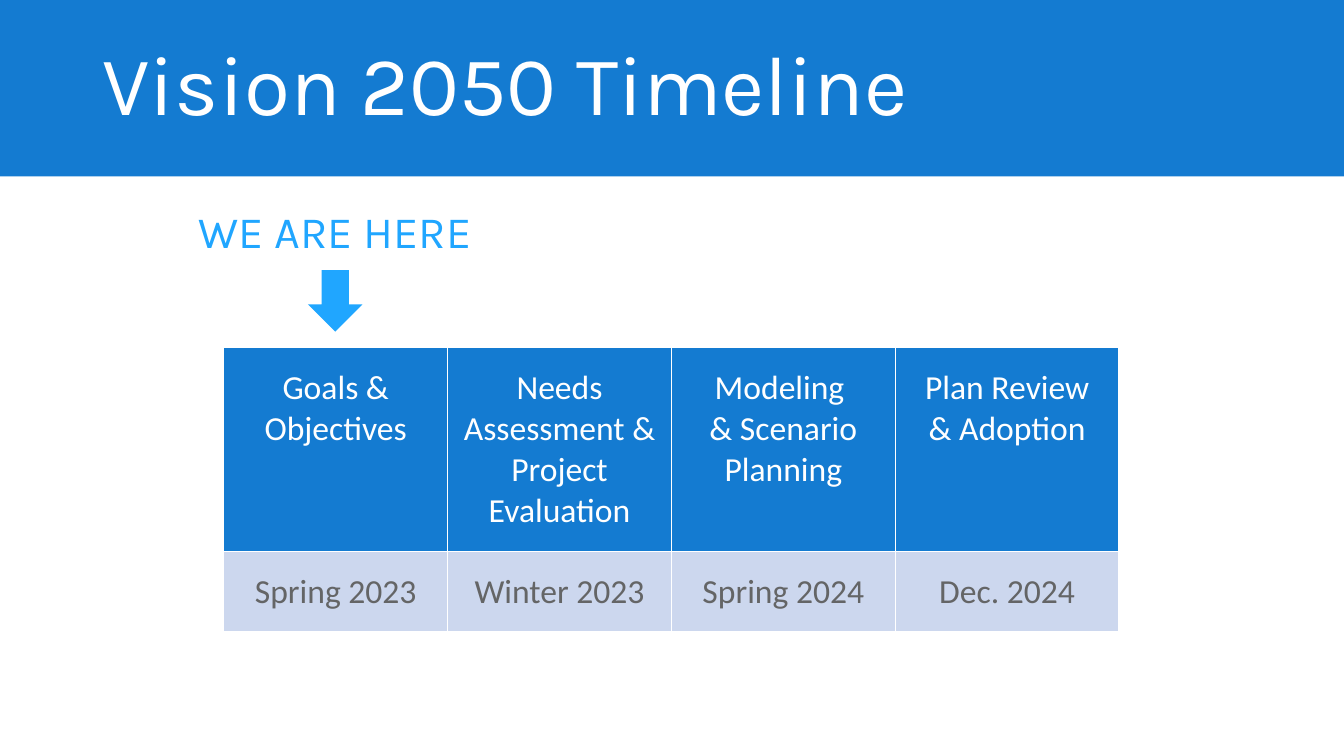
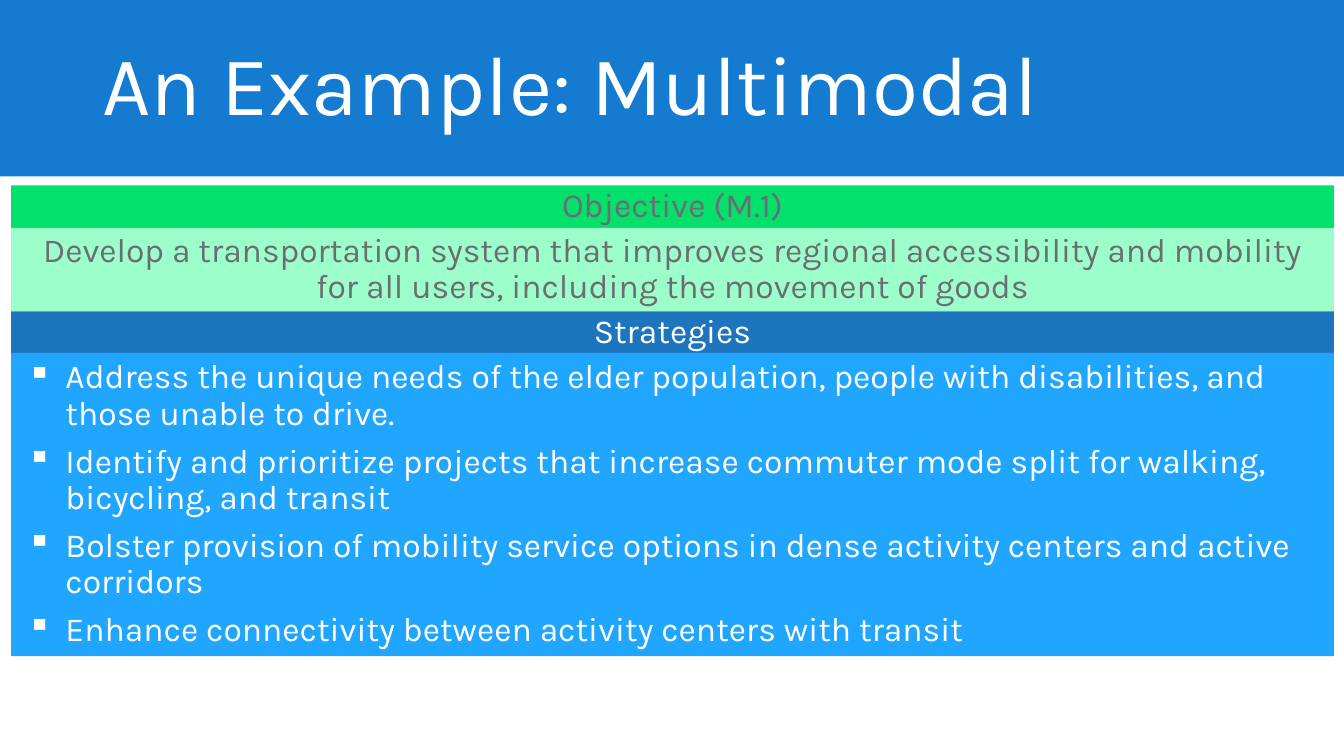
from lxml import etree
from pptx import Presentation
from pptx.dml.color import RGBColor
from pptx.enum.shapes import MSO_SHAPE
from pptx.enum.text import MSO_ANCHOR, PP_ALIGN
from pptx.oxml.ns import qn
from pptx.util import Inches, Pt

RECTANGLE, DOWN_ARROW = MSO_SHAPE.RECTANGLE, MSO_SHAPE.DOWN_ARROW
TOP, MIDDLE, BOTTOM = MSO_ANCHOR.TOP, MSO_ANCHOR.MIDDLE, MSO_ANCHOR.BOTTOM
LEFT, CENTER = PP_ALIGN.LEFT, PP_ALIGN.CENTER

SLIDE_WIDTH, SLIDE_HEIGHT = 13.33, 7.5
BAND_HEIGHT = 1.75
TITLE_FONT, TABLE_FONT = "Karla", "Calibri"
WHITE, BLUE, SKY, NAVY = "FFFFFF", "147BD1", "20A6FF", "1D75BD"
GREEN, MINT, LAVENDER = "03E06C", "9CFECB", "CCD7EE"
GRAY, TABLE_GRAY = "6C6D70", "646566"

PHASES = [
    (["Goals & Objectives"], "Spring 2023"),
    (["Needs Assessment & Project Evaluation"], "Winter 2023"),
    (["Modeling ", "& Scenario Planning"], "Spring 2024"),
    (["Plan Review", "& Adoption"], "Dec. 2024"),
]
OBJECTIVE = ("Develop a transportation system that improves regional accessibility "
             "and mobility for all users, including the movement of goods")
STRATEGIES = [
    "Address the unique needs of the elder population, people with disabilities, "
    "and those unable to drive.",
    "Identify and prioritize projects that increase commuter mode split for walking, "
    "bicycling, and transit",
    "Bolster provision of mobility service options in dense activity centers and "
    "active corridors",
    "Enhance connectivity between activity centers with transit",
]


def color(value):
    return RGBColor.from_string(value)


def add_bullet(para):
    properties = para._p.get_or_add_pPr()
    properties.set("marL", str(Inches(0.38)))
    properties.set("indent", str(-Inches(0.38)))
    etree.SubElement(properties, qn("a:buChar")).set("char", "▪")


def write(frame, lines, size, ink, font=TITLE_FONT, align=CENTER,
          spacing=None, after=None, bullets=False):
    frame.word_wrap = True
    for index, line in enumerate(lines):
        para = frame.add_paragraph() if index else frame.paragraphs[0]
        if bullets:
            add_bullet(para)
        para.alignment = align
        if spacing:
            para.line_spacing = spacing
        if after:
            para.space_after = Pt(after)
        span = para.add_run()
        span.text = line
        span.font.size = Pt(size)
        span.font.name = font
        span.font.color.rgb = color(ink)


def add_block(page, box, fill, preset=RECTANGLE):
    shape = page.shapes.add_shape(preset, *map(Inches, box))
    shape.shadow.inherit = False
    shape.fill.solid()
    shape.fill.fore_color.rgb = color(fill)
    shape.line.fill.background()
    return shape


def add_label(page, box, text, size, ink, anchor, **style):
    frame = page.shapes.add_textbox(*map(Inches, box)).text_frame
    frame.vertical_anchor = anchor
    write(frame, [text], size, ink, **style)


def add_titled_page(deck, title):
    page = deck.slides.add_slide(deck.slide_layouts[6])
    add_block(page, (0, 0, SLIDE_WIDTH, BAND_HEIGHT), BLUE)
    add_label(page, (0.92, 0.31, 9.88, 1.07), title, 60, WHITE, BOTTOM,
              align=LEFT, spacing=0.9)
    return page


def add_cell_borders(cell):
    properties = cell._tc.get_or_add_tcPr()
    for side in ("a:lnL", "a:lnR", "a:lnT", "a:lnB"):
        line = etree.SubElement(properties, qn(side), w=str(Pt(1)))
        fill = etree.SubElement(line, qn("a:solidFill"))
        etree.SubElement(fill, qn("a:srgbClr"), val=WHITE)


def fill_cell(cell, lines, fill, ink):
    cell.margin_left = cell.margin_right = Inches(0.1)
    cell.margin_top = cell.margin_bottom = Inches(0.2)
    cell.vertical_anchor = TOP
    add_cell_borders(cell)
    cell.fill.solid()
    cell.fill.fore_color.rgb = color(fill)
    write(cell.text_frame, lines, 24, ink, font=TABLE_FONT)


def add_phase_table(page, left, top, width, row_heights):
    frame = page.shapes.add_table(2, len(PHASES), Inches(left), Inches(top),
                                  Inches(width), Inches(sum(row_heights)))
    table = frame.table
    for row, height in zip(table.rows, row_heights):
        row.height = Inches(height)
    for index, (phase, date) in enumerate(PHASES):
        table.columns[index].width = Inches(width / len(PHASES))
        fill_cell(table.cell(0, index), phase, BLUE, WHITE)
        fill_cell(table.cell(1, index), [date], LAVENDER, TABLE_GRAY)


def add_marker(page, left, top, width):
    arrow_width = 0.54
    add_label(page, (left, top, width, 0.91), "WE ARE HERE", 32, SKY, MIDDLE)
    arrow_left = left + (width - arrow_width) / 2
    add_block(page, (arrow_left, top + 0.85, arrow_width, 0.61), SKY, DOWN_ARROW)


def add_objective_stack(page, left, top, width):
    rows = [
        (0.42, GREEN, GRAY, ["Objective (M.1)"], False),
        (0.83, MINT, GRAY, [OBJECTIVE], False),
        (0.41, NAVY, WHITE, ["Strategies"], False),
        (3.01, SKY, WHITE, STRATEGIES, True),
    ]
    for height, fill, ink, lines, bullets in rows:
        frame = add_block(page, (left, top, width, height), fill).text_frame
        frame.margin_left = frame.margin_right = Inches(0.16)
        frame.margin_top = frame.margin_bottom = Inches(0.16)
        frame.vertical_anchor = MIDDLE
        write(frame, lines, 24, ink, align=LEFT if bullets else CENTER,
              spacing=0.9, after=8.4, bullets=bullets)
        top += height


def main():
    deck = Presentation()
    deck.slide_width, deck.slide_height = Inches(SLIDE_WIDTH), Inches(SLIDE_HEIGHT)
    timeline = add_titled_page(deck, "Vision 2050 Timeline")
    add_phase_table(timeline, 2.22, 3.45, 8.88, (2.02, 0.8))
    add_marker(timeline, 1.79, 1.83, 3.07)
    example = add_titled_page(deck, "An Example: Multimodal")
    add_objective_stack(example, 0.11, 1.84, 13.12)
    deck.save("out.pptx")


if __name__ == "__main__":
    main()
